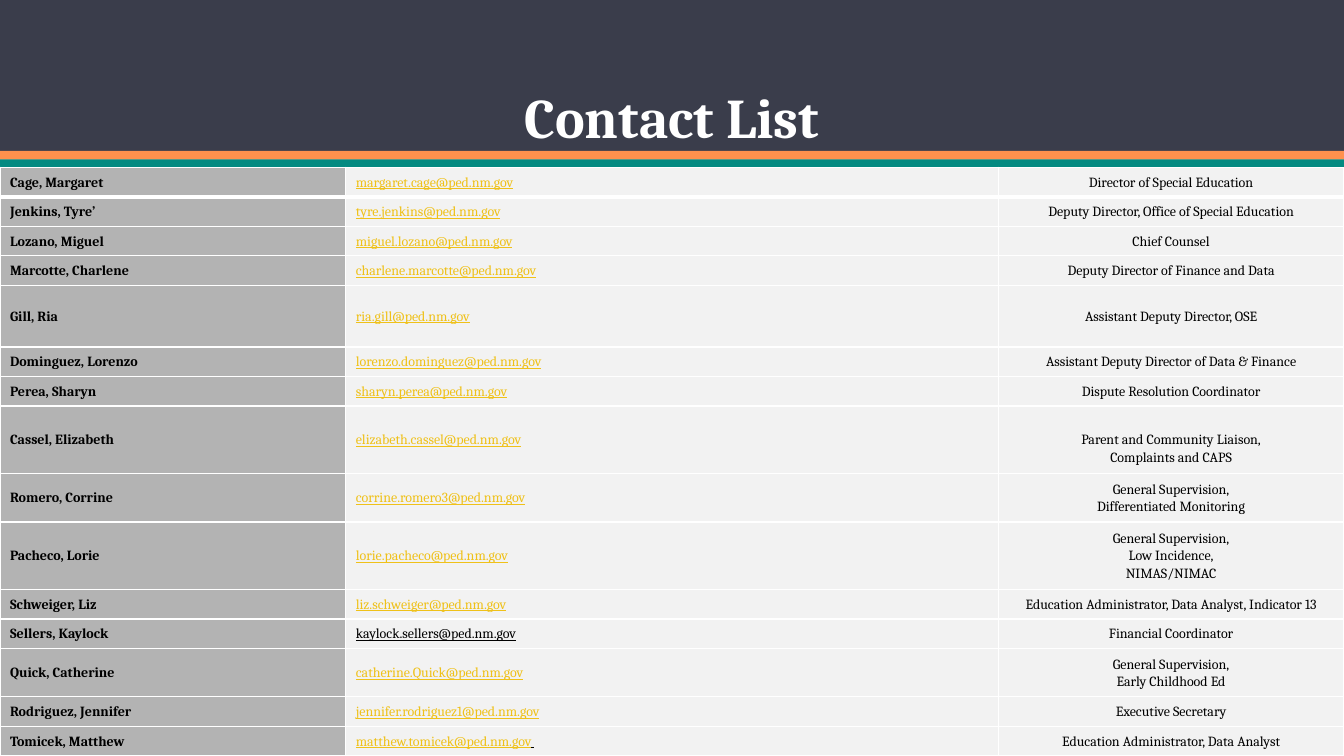
from lxml.etree import SubElement
from pptx import Presentation
from pptx.dml.color import RGBColor
from pptx.enum.shapes import MSO_SHAPE as Shape
from pptx.enum.text import MSO_ANCHOR as Anchor, MSO_AUTO_SIZE as AutoSize, PP_ALIGN as Align
from pptx.oxml.ns import qn
from pptx.util import Pt

COLOURS = {
    "header": "3A3D4B", "orange": "FF914D", "teal": "048A81", "white": "FFFFFF",
    "name": "B3B3B3", "detail": "F2F2F2", "link": "EFC119", "text": "000000",
}
FONT = "Cambria"
WIDTH, HEIGHT = 960, 540
COLUMN_WIDTHS = (247, 466, 247)
SINGLE, DOUBLE, TRIPLE, PADDED = 21.1, 34.6, 48.2, 44
DOMAIN = "@ped.nm.gov"

CONTACTS = [
    ("Cage, Margaret", "margaret.cage", "Director of Special Education", SINGLE),
    ("Jenkins, Tyre’", "tyre.jenkins", "Deputy Director, Office of Special Education", SINGLE),
    ("Lozano, Miguel", "miguel.lozano", "Chief Counsel", SINGLE),
    ("Marcotte, Charlene", "charlene.marcotte", "Deputy Director of Finance and Data", SINGLE),
    ("Gill, Ria", "ria.gill", "Assistant Deputy Director, OSE", PADDED),
    ("Dominguez, Lorenzo", "lorenzo.dominguez", "Assistant Deputy Director of Data & Finance", SINGLE),
    ("Perea, Sharyn", "sharyn.perea", "Dispute Resolution Coordinator", SINGLE),
    ("Cassel, Elizabeth", "elizabeth.cassel", "Parent and Community Liaison,\nComplaints and CAPS", TRIPLE),
    ("Romero, Corrine", "corrine.romero3", "General Supervision,\nDifferentiated Monitoring", DOUBLE),
    ("Pacheco, Lorie", "lorie.pacheco", "General Supervision,\nLow Incidence,\nNIMAS/NIMAC", TRIPLE),
    ("Schweiger, Liz", "liz.schweiger", "Education Administrator, Data Analyst, Indicator 13", SINGLE),
    ("Sellers, Kaylock", "kaylock.sellers", "Financial Coordinator", SINGLE),
    ("Quick, Catherine", "catherine.Quick", "General Supervision,\nEarly Childhood Ed", DOUBLE),
    ("Rodriguez, Jennifer", "jennifer.rodriguez1", "Executive Secretary", SINGLE),
    ("Tomicek, Matthew", "matthew.tomicek", "Education Administrator, Data Analyst", SINGLE),
]
PLAIN_EMAIL = "Sellers, Kaylock"
UNDERLINED_SPACE = "Tomicek, Matthew"
ROLE_MARGINS = {"Gill, Ria": (14.4, 14.4), "Cassel, Elizabeth": (16, 3.6)}


def colour(key):
    """Return the named colour."""
    return RGBColor.from_string(COLOURS[key])


def add_text(paragraph, text, size, key, bold=False, underline=False):
    """Add one formatted run for each line of the text."""
    for number, line in enumerate(text.split("\n")):
        if number:
            paragraph.add_line_break()
        run = paragraph.add_run()
        run.text = line
        run.font.name, run.font.size = FONT, Pt(size)
        run.font.bold, run.font.underline = bold, underline
        run.font.color.rgb = colour(key)


def add_header(slide, left, top, width):
    """Draw the dark band with its two stripes and set the title in it."""
    for offset, height, key in ((0, 108, "header"), (107.8, 6.2, "orange"), (113.8, 6.2, "teal")):
        band = slide.shapes.add_shape(Shape.RECTANGLE, Pt(left), Pt(top + offset), Pt(width), Pt(height))
        band.shadow.inherit = False
        band.fill.solid()
        band.fill.fore_color.rgb = colour(key)
        band.line.fill.background()
    title = slide.shapes.title
    title_width = 577.4
    title.left, title.top = Pt(left + (width - title_width) / 2), Pt(top + 55.4)
    title.width, title.height = Pt(title_width), Pt(55.4)
    frame = title.text_frame
    frame.word_wrap, frame.auto_size = True, AutoSize.SHAPE_TO_FIT_TEXT
    frame.vertical_anchor = Anchor.TOP
    paragraph = frame.paragraphs[0]
    paragraph.alignment = Align.CENTER
    add_text(paragraph, "Contact List", 40, "white", bold=True)
    slide.shapes._spTree.append(title._element)


def format_cell(cell, fill, bottom_width):
    """Give a cell its white borders, fill and spacing, and return its paragraph."""
    properties = cell._tc.get_or_add_tcPr()
    for side, weight in (("L", 1), ("R", 1), ("T", 1), ("B", bottom_width)):
        border = SubElement(properties, qn(f"a:ln{side}"), w=str(Pt(weight)))
        solid = SubElement(border, qn("a:solidFill"))
        SubElement(solid, qn("a:srgbClr"), val=COLOURS["white"])
    cell.fill.solid()
    cell.fill.fore_color.rgb = colour(fill)
    cell.vertical_anchor = Anchor.MIDDLE
    cell.margin_left = cell.margin_right = Pt(7.2)
    cell.margin_top = cell.margin_bottom = Pt(3.6)
    paragraph = cell.text_frame.paragraphs[0]
    paragraph.line_spacing = 1.07
    return paragraph


def add_contacts(slide, left, top, width, height):
    """Fill the table of names, e-mail addresses and roles."""
    table = slide.shapes.add_table(
        len(CONTACTS), len(COLUMN_WIDTHS), Pt(left), Pt(top), Pt(width), Pt(height)).table
    table.first_row = table.horz_banding = False
    for column, column_width in zip(table.columns, COLUMN_WIDTHS):
        column.width = Pt(column_width)
    for number, (name, user, role, row_height) in enumerate(CONTACTS):
        row = table.rows[number]
        row.height = Pt(row_height)
        bottom_width = 1 if number else 3
        name_cell, email_cell, role_cell = row.cells
        add_text(format_cell(name_cell, "name", bottom_width), name, 10, "text", bold=True)
        email = format_cell(email_cell, "detail", bottom_width)
        email_colour = "text" if name == PLAIN_EMAIL else "link"
        add_text(email, user + DOMAIN, 10, email_colour, underline=True)
        if name == UNDERLINED_SPACE:
            add_text(email, " ", 10, "text", underline=True)
        role_line = format_cell(role_cell, "detail", bottom_width)
        role_line.alignment = Align.CENTER
        add_text(role_line, role, 10, "text")
        if name in ROLE_MARGINS:
            role_cell.margin_top, role_cell.margin_bottom = map(Pt, ROLE_MARGINS[name])


def main():
    """Build the contact slide and save it."""
    deck = Presentation()
    deck.slide_width, deck.slide_height = Pt(WIDTH), Pt(HEIGHT)
    slide = deck.slides.add_slide(deck.slide_layouts[5])
    table_top = 119.5
    add_header(slide, 0, 0, WIDTH)
    add_contacts(slide, 0, table_top, WIDTH, HEIGHT - table_top)
    deck.save("out.pptx")


if __name__ == "__main__":
    main()
